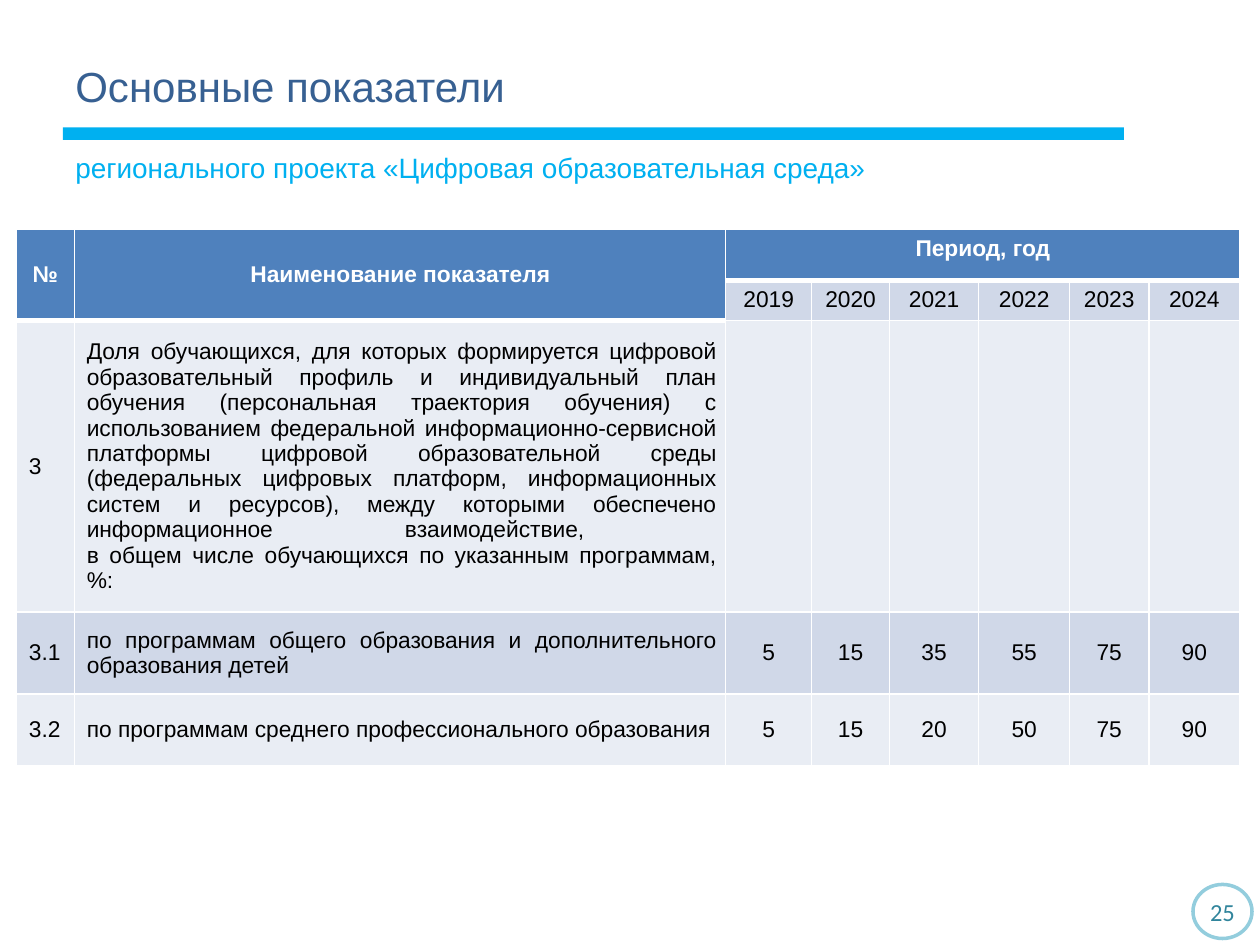
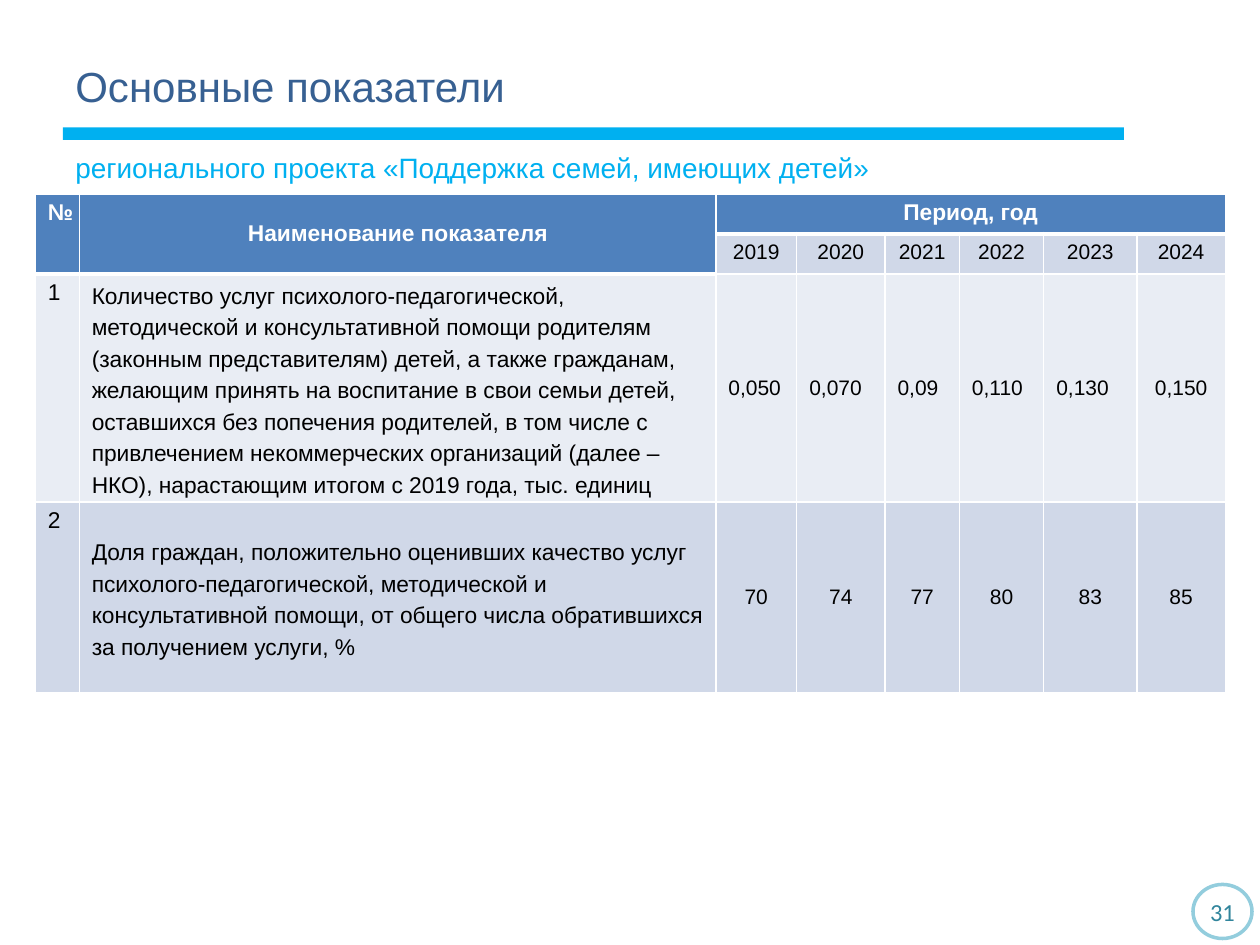
import pptx
import pptx.util
import pptx.dml.color
import pptx.enum.shapes
import pptx.enum.text
import pptx.oxml.ns
from lxml import etree

Cm, Pt = pptx.util.Cm, pptx.util.Pt
Shape = pptx.enum.shapes.MSO_SHAPE
Align = pptx.enum.text.PP_ALIGN
Anchor = pptx.enum.text.MSO_ANCHOR
qn = pptx.oxml.ns.qn

HUES = {
    "bar": "00B0F0", "title": "376092", "head": "4F81BD", "dark": "D0D8E8",
    "light": "E9EDF4", "ring": "93CDDD", "page": "31859C",
    "white": "FFFFFF", "black": "000000",
}
YEARS = ["2019", "2020", "2021", "2022", "2023", "2024"]
HEAD = ["№", "Наименование показателя", "Период, год"]

SLIDES = [
    {
        "name": "регионального проекта «Цифровая образовательная среда»",
        "page": "25",
        "left": 0.33, "top": 4.62,
        "cols": [1.17, 13.13, 1.73, 1.57, 1.8, 1.83, 1.6, 1.83],
        "rows": [1.04, 0.76, 5.87, 1.65, 1.45],
        "size": 13, "anchor": Anchor.MIDDLE,
        "align": Align.JUSTIFY, "lead": None, "inset": 0.2,
        "body": [
            ["3", "Доля обучающихся, для которых формируется цифровой "
                  "образовательный профиль и индивидуальный план обучения "
                  "(персональная траектория обучения) с использованием "
                  "федеральной информационно-сервисной платформы цифровой "
                  "образовательной среды (федеральных цифровых платформ, "
                  "информационных систем и ресурсов), между которыми "
                  "обеспечено информационное взаимодействие, \v"
                  "в общем числе обучающихся по указанным программам, %:"]
            + [""] * 6,
            ["3.1", "по программам общего образования и дополнительного "
                    "образования детей", "5", "15", "35", "55", "75", "90"],
            ["3.2", "по программам среднего профессионального образования",
             "5", "15", "20", "50", "75", "90"],
        ],
    },
    {
        "name": "регионального проекта «Поддержка семей, имеющих детей»",
        "page": "31",
        "left": 0.71, "top": 3.91,
        "cols": [0.89, 12.83, 1.63, 1.78, 1.5, 1.7, 1.88, 1.78],
        "rows": [0.74, 0.76, 4.6, 3.84],
        "size": 12, "anchor": Anchor.TOP,
        "align": Align.LEFT, "lead": Pt(18), "inset": 0.05,
        "body": [
            ["1", "Количество услуг психолого-педагогической, методической и "
                  "консультативной помощи родителям (законным "
                  "представителям) детей, а также гражданам, желающим "
                  "принять на воспитание в свои семьи детей, оставшихся без "
                  "попечения родителей, в том числе с привлечением "
                  "некоммерческих организаций (далее – НКО), нарастающим "
                  "итогом с 2019 года, тыс. единиц",
             "0,050", "0,070", "0,09", "0,110", "0,130", "0,150"],
            ["2", "Доля граждан, положительно оценивших качество услуг "
                  "психолого-педагогической, методической и консультативной "
                  "помощи, от общего числа обратившихся за получением "
                  "услуги, %", "70", "74", "77", "80", "83", "85"],
        ],
    },
]


def write(frame, text, size, hue, align=Align.LEFT, face="Arial", bold=False):
    frame.text = text
    par = frame.paragraphs[0]
    par.alignment = align
    for run in par.runs:
        run.font.size = Pt(size)
        run.font.name = face
        run.font.bold = bold
        run.font.color.rgb = pptx.dml.color.RGBColor.from_string(HUES[hue])
    for gap in par._p.findall(qn("a:br")):
        etree.SubElement(gap, qn("a:rPr"), sz=str(size * 100))
    return par


def paint(cell, hue, thick):
    """Fill a cell and give it white borders, 3 pt on the thick sides."""
    props = cell._tc.get_or_add_tcPr()
    for side in "LRTB":
        width = Pt(3 if side in thick else 1)
        line = etree.SubElement(props, qn("a:ln" + side), w=str(width))
        fill = etree.SubElement(line, qn("a:solidFill"))
        etree.SubElement(fill, qn("a:srgbClr"), val=HUES["white"])
    cell.fill.solid()
    cell.fill.fore_color.rgb = pptx.dml.color.RGBColor.from_string(HUES[hue])


deck = pptx.Presentation()
deck.slide_width, deck.slide_height = Cm(25.4), Cm(19.05)

for item in SLIDES:
    shapes = deck.slides.add_slide(deck.slide_layouts[6]).shapes

    bar = shapes.add_shape(Shape.RECTANGLE, Cm(1.27), Cm(2.57), Cm(21.39), Cm(0.25))
    bar.shadow.inherit = False
    bar.fill.solid()
    bar.fill.fore_color.rgb = pptx.dml.color.RGBColor.from_string(HUES["bar"])
    bar.line.fill.background()

    for text, top, wide, high, size, hue in [
        (item["name"], 2.92, 21.74, 1.24, 16, "bar"),
        ("Основные показатели", 1.09, 19.79, 1.63, 24, "title"),
    ]:
        box = shapes.add_textbox(Cm(1.27), Cm(top), Cm(wide), Cm(high))
        box.text_frame.word_wrap = True
        write(box.text_frame, text, size, hue)

    cols, rows = item["cols"], item["rows"]
    grid = shapes.add_table(len(rows), len(cols), Cm(item["left"]), Cm(item["top"]),
                            Cm(sum(cols)), Cm(sum(rows))).table
    grid.first_row = grid.horz_banding = False
    for col, wide in zip(grid.columns, cols):
        col.width = Cm(wide)
    for row, high in zip(grid.rows, rows):
        row.height = Cm(high)

    lines = [HEAD + [""] * 5, ["", ""] + YEARS] + item["body"]
    for r, line in enumerate(lines):
        for c, text in enumerate(line):
            cell = grid.cell(r, c)
            head = r == 0 or (r == 1 and c < 2)
            under = (r == 1 and c > 1) or (r == 2 and c < 2)
            hue = "head" if head else "dark" if r % 2 else "light"
            paint(cell, hue, "B" if head else "T" if under else "")

            if c == 0:
                cell.vertical_anchor = item["anchor"]
            elif (c == 1 and r != 1) or r > 1:
                cell.vertical_anchor = Anchor.MIDDLE
            if not text:
                continue
            size = 13 if head or c < 2 else item["size"]
            align = Align.CENTER
            if not head and (c == 0 or (text.startswith("0,") and c < 7)):
                align = Align.LEFT
            if not head and c == 1:
                align = item["align"]
            par = write(cell.text_frame, text, size, "white" if head else "black",
                        align, bold=head)
            if c == 1 and not head:
                cell.margin_left, cell.margin_right = Cm(0.05), Cm(item["inset"])
                cell.margin_top = cell.margin_bottom = 0
                par._p.get_or_add_pPr().set("marL", str(Cm(0.2)))
                par.line_spacing = item["lead"]

    for c in range(2):
        grid.cell(0, c).merge(grid.cell(1, c))
    grid.cell(0, 2).merge(grid.cell(0, 7))

    ring = shapes.add_shape(Shape.OVAL, Cm(24.05), Cm(17.83), Cm(1.19), Cm(1.09))
    ring.shadow.inherit = False
    ring.fill.solid()
    ring.fill.fore_color.rgb = pptx.dml.color.RGBColor.from_string(HUES["white"])
    ring.line.color.rgb = pptx.dml.color.RGBColor.from_string(HUES["ring"])
    ring.line.width = Pt(2)
    frame = ring.text_frame
    frame.margin_left = frame.margin_right = 0
    frame.margin_top = frame.margin_bottom = 0
    frame.vertical_anchor = Anchor.MIDDLE
    frame.word_wrap = False
    write(frame, item["page"], 14, "page", Align.CENTER, "Calibri")

deck.save("out.pptx")
